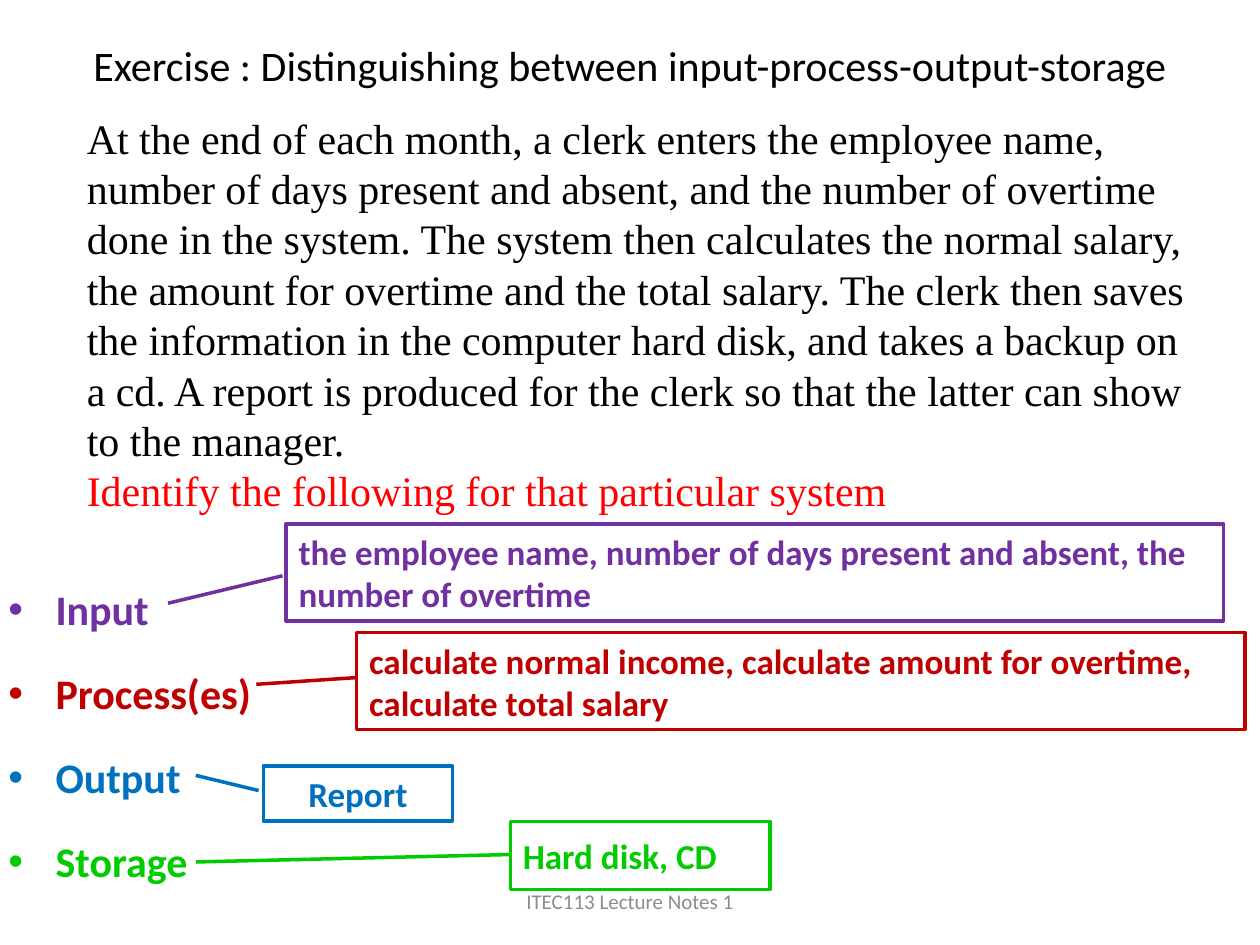
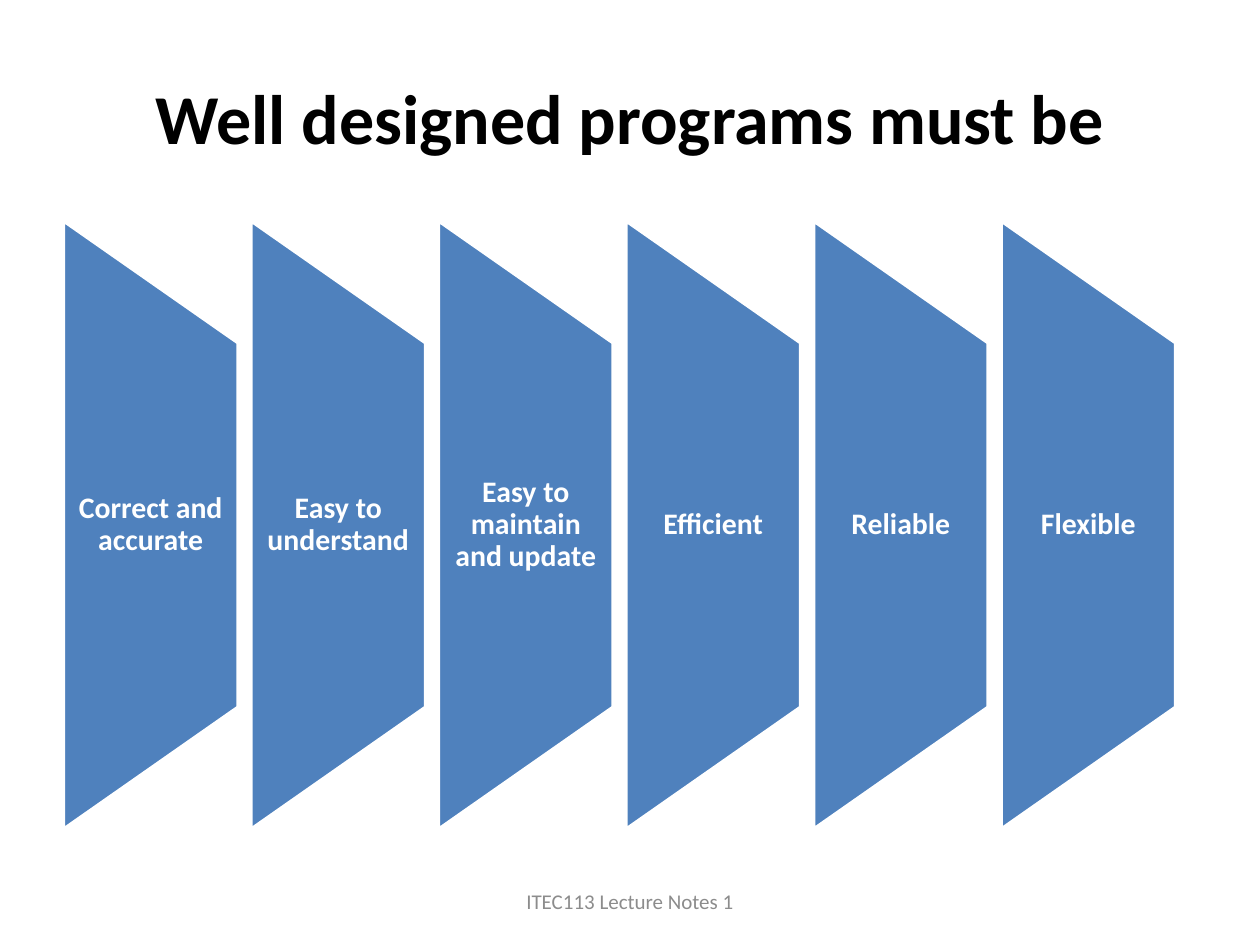
from lxml.etree import SubElement
from pptx import Presentation
from pptx.dml.color import RGBColor
from pptx.enum.shapes import MSO_SHAPE as Preset
from pptx.enum.text import MSO_ANCHOR as Anchor, PP_ALIGN as Align
from pptx.oxml.ns import qn
from pptx.util import Cm, Pt

COLORS = {
    "black": "000000", "white": "FFFFFF", "red": "FF0000", "footer": "8C8C8C",
    "input": "7030A0", "process": "C00000", "output": "0070C0",
    "storage": "00CC00", "panel": "4F81BD",
}


def rgb(name):
    return RGBColor.from_string(COLORS[name])


def write(shape, lines, size=24, font="Calibri", bold=False, align=Align.LEFT,
          anchor=Anchor.TOP, spacing=None, before=0, bullet=None,
          margins=(0.25, 0.13)):
    """Fill a shape with paragraphs given as (text, color name) pairs."""
    frame = shape.text_frame
    frame.word_wrap = True
    frame.vertical_anchor = anchor
    frame.margin_left = frame.margin_right = Cm(margins[0])
    frame.margin_top = frame.margin_bottom = Cm(margins[1])
    for index, (text, color) in enumerate(lines):
        paragraph = frame.add_paragraph() if index else frame.paragraphs[0]
        paragraph.alignment = align
        if spacing:
            paragraph.line_spacing = spacing
        if index and before:
            paragraph.space_before = Pt(before)
        if bullet:
            properties = paragraph._p.get_or_add_pPr()
            properties.set("marL", str(Cm(0.95)))
            properties.set("indent", str(Cm(-0.95)))
            SubElement(properties, qn("a:buFont")).set("typeface", "Arial")
            SubElement(properties, qn("a:buChar")).set("char", bullet)
        run = paragraph.add_run()
        run.text = text
        run.font.name = font
        run.font.size = Pt(size)
        run.font.bold = bold
        run.font.color.rgb = rgb(color)


deck = Presentation()
deck.slide_width, deck.slide_height = Cm(25.4), Cm(19.05)
blank = deck.slide_layouts[6]
exercise = deck.slides.add_slide(blank)
qualities = deck.slides.add_slide(blank)

# Shared footer
for slide in (exercise, qualities):
    footer = slide.shapes.add_textbox(Cm(8.68), Cm(17.66), Cm(8.04), Cm(1.01))
    write(footer, [("ITEC113 Lecture Notes 1", "footer")], size=12,
          align=Align.CENTER, anchor=Anchor.MIDDLE)

# Exercise: title and scenario
exercise_title = exercise.shapes.add_textbox(Cm(1.27), Cm(0.76), Cm(22.86), Cm(2.16))
write(exercise_title,
      [("Exercise : Distinguishing between input-process-output-storage", "black")],
      align=Align.CENTER, margins=(0.25, 0.03))

scenario = exercise.shapes.add_textbox(Cm(1.5), Cm(2.13), Cm(22.81), Cm(9.5))
write(scenario, [
    ("At the end of each month, a clerk enters the employee name, number of days "
     "present and absent, and the number of overtime done in the system. The system "
     "then calculates the normal salary, the amount for overtime and the total "
     "salary. The clerk then saves the information in the computer hard disk, and "
     "takes a backup on a cd. A report is produced for the clerk so that the latter "
     "can show to the manager.", "black"),
    ("Identify the following for that particular system", "red"),
], font="Times New Roman")

# Exercise: the four stages
stages = exercise.shapes.add_textbox(Cm(-0.08), Cm(11.13), Cm(7.04), Cm(7.59))
write(stages, [("Input", "input"), ("Process(es)", "process"),
               ("Output", "output"), ("Storage", "storage")],
      bold=True, spacing=1.5, before=4.8, bullet="•")

# Exercise: answers, each with a leader line to its stage
answers = [
    ("calculate normal income, calculate amount for overtime, calculate total salary",
     "process", (7.19, 12.75, 17.91, 1.96), (0.464, 0.001, 0.534, -0.113), Align.LEFT),
    ("the employee name, number of days present and absent, the number of overtime",
     "input", (5.77, 10.56, 18.9, 1.96), (0.535, -0.004, 0.817, -0.126), Align.LEFT),
    ("Report", "output", (5.31, 15.44, 3.81, 1.11),
     (0.448, -0.025, 0.173, -0.358), Align.CENTER),
    ("Hard disk, CD", "storage", (10.29, 16.56, 5.23, 1.37),
     (0.487, 0, 0.597, -1.212), Align.LEFT),
]
for text, color, box, leader, align in answers:
    answer = exercise.shapes.add_shape(Preset.LINE_CALLOUT_1, *map(Cm, box))
    for index, value in enumerate(leader):
        answer.adjustments[index] = value
    answer.shadow.inherit = False
    answer.fill.background()
    answer.line.color.rgb = rgb(color)
    answer.line.width = Pt(2)
    write(answer, [(text, color)], size=20, bold=True, align=align,
          anchor=Anchor.MIDDLE)

# Qualities: title
qualities_title = qualities.shapes.add_textbox(Cm(1.27), Cm(0.76), Cm(22.86), Cm(3.18))
write(qualities_title, [("Well designed programs must be", "black")], size=40,
      bold=True, align=Align.CENTER, anchor=Anchor.MIDDLE)

# Qualities: a row of tapered panels
panel_left, panel_top, panel_pitch = 1.28, 4.45, 3.78
panel_width, panel_height, taper = 3.52, 12.27, 2.46
panel_bottom = panel_top + panel_height
for index, quality in enumerate(["Correct and accurate", "Easy to understand",
                                 "Easy to maintain and update", "Efficient",
                                 "Reliable", "Flexible"]):
    left = panel_left + index * panel_pitch
    right = left + panel_width
    outline = qualities.shapes.build_freeform(Cm(left), Cm(panel_bottom))
    outline.add_line_segments([
        (Cm(left), Cm(panel_top)),
        (Cm(right), Cm(panel_top + taper)),
        (Cm(right), Cm(panel_bottom - taper)),
    ], close=True)
    panel = outline.convert_to_shape()
    panel.shadow.inherit = False
    panel.fill.solid()
    panel.fill.fore_color.rgb = rgb("panel")
    panel.line.color.rgb = rgb("white")
    panel.line.width = Pt(2)
    write(panel, [(quality, "white")], size=17, bold=True, align=Align.CENTER,
          anchor=Anchor.MIDDLE, spacing=0.9, margins=(0.3, taper))

deck.save("out.pptx")
